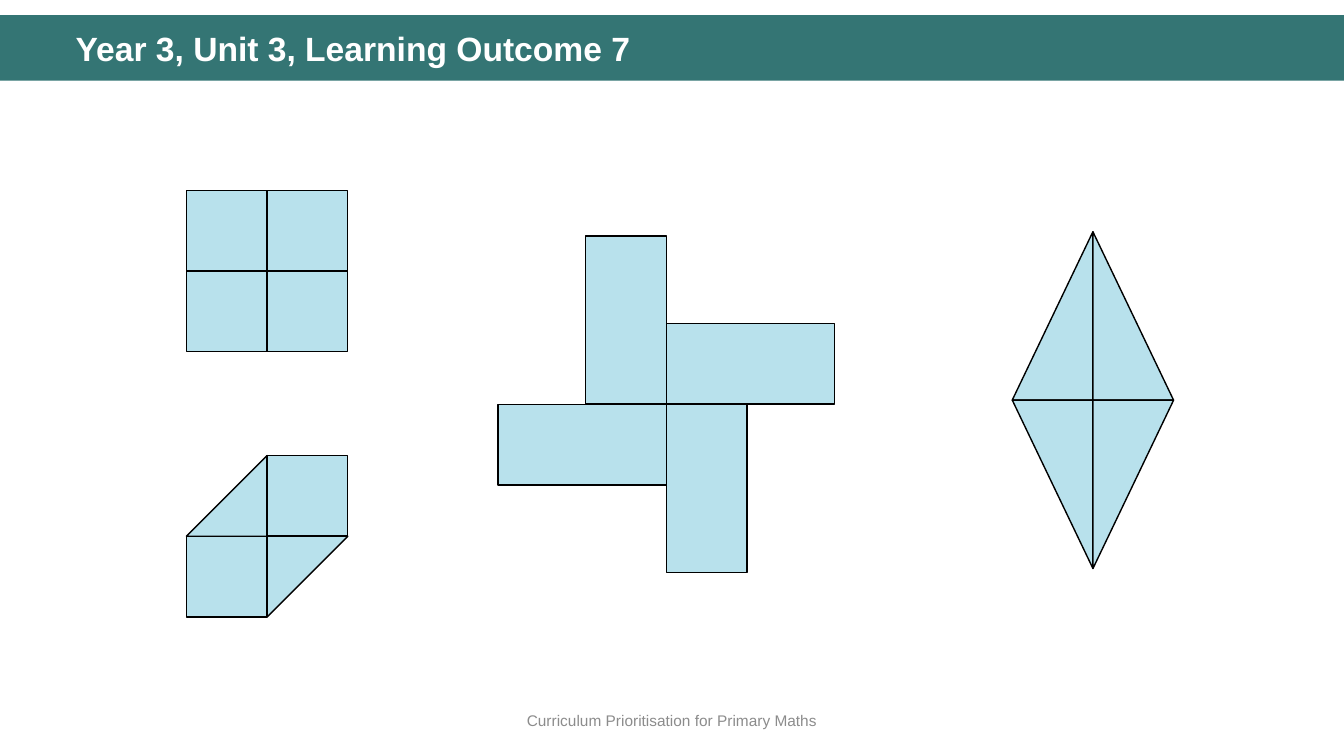
from math import cos, radians, sin

from pptx import Presentation
from pptx.dml.color import RGBColor
from pptx.enum.shapes import MSO_SHAPE
from pptx.enum.text import MSO_ANCHOR, MSO_AUTO_SIZE, PP_ALIGN
from pptx.util import Inches, Pt

TEAL = RGBColor(0x34, 0x75, 0x74)
PALE_BLUE = RGBColor(0xB8, 0xE1, 0xEC)
BLACK = RGBColor(0, 0, 0)
WHITE = RGBColor(255, 255, 255)
GREY = RGBColor(0x8C, 0x8C, 0x8C)

SLIDE_WIDTH = 13.33
SHORT = 0.8
LONG = 1.67
QUARTERS = [(-1, -1), (1, -1), (-1, 1), (1, 1)]


def write(holder, text, size, color, bold=False, align=PP_ALIGN.LEFT,
          anchor=MSO_ANCHOR.TOP, spacing=1.0):
    frame = holder.text_frame
    frame.word_wrap = True
    frame.auto_size = MSO_AUTO_SIZE.NONE
    frame.vertical_anchor = anchor
    frame.text = text
    paragraph = frame.paragraphs[0]
    paragraph.alignment = align
    paragraph.line_spacing = spacing
    font = paragraph.runs[0].font
    font.name = "Arial"
    font.size = Pt(size)
    font.bold = bold
    font.color.rgb = color


def place(holder, left, top, width, height):
    holder.left, holder.top = Inches(left), Inches(top)
    holder.width, holder.height = Inches(width), Inches(height)


def add_tile(slide, preset, left, top, width, height, fill=PALE_BLUE, outline=BLACK):
    tile = slide.shapes.add_shape(
        preset, Inches(left), Inches(top), Inches(width), Inches(height))
    tile.shadow.inherit = False
    tile.fill.solid()
    tile.fill.fore_color.rgb = fill
    if outline is None:
        tile.line.fill.background()
    else:
        tile.line.color.rgb = outline
        tile.line.width = Pt(1)
    return tile


def add_quarter(slide, preset, centre, side, width, height):
    (x, y), (across, down) = centre, side
    left = x if across > 0 else x - width
    top = y if down > 0 else y - height
    tile = add_tile(slide, preset, left, top, width, height)
    if preset == MSO_SHAPE.RIGHT_TRIANGLE:
        if down > 0:
            tile.rotation = 180
        if across == down:
            tile._element.spPr.xfrm.set("flipH", "1")


def add_square(slide, centre):
    for side in QUARTERS:
        add_quarter(slide, MSO_SHAPE.RECTANGLE, centre, side, SHORT, SHORT)


def add_hexagon(slide, centre):
    for side in QUARTERS:
        preset = MSO_SHAPE.RIGHT_TRIANGLE if side[0] == side[1] else MSO_SHAPE.RECTANGLE
        add_quarter(slide, preset, centre, side, SHORT, SHORT)


def add_rhombus(slide, centre):
    for side in QUARTERS:
        add_quarter(slide, MSO_SHAPE.RIGHT_TRIANGLE, centre, side, SHORT, LONG)


def add_pinwheel(slide, centre):
    x, y = centre
    for angle in range(0, 360, 90):
        c, s = cos(radians(angle)), sin(radians(angle))
        blade_x = x + (LONG * c + SHORT * s) / 2
        blade_y = y + (LONG * s - SHORT * c) / 2
        blade = add_tile(slide, MSO_SHAPE.RECTANGLE,
                         blade_x - LONG / 2, blade_y - SHORT / 2, LONG, SHORT)
        blade.rotation = angle


def add_header(slide, text):
    band = add_tile(slide, MSO_SHAPE.RECTANGLE, 0, 0.15, SLIDE_WIDTH, 0.65,
                    fill=TEAL, outline=None)
    title = slide.shapes.title
    title._element.addprevious(band._element)
    place(title, 0.65, 0.27, 12.32, 0.47)
    write(title, text, 24, WHITE, bold=True, spacing=0.9)


def add_footer(slide, text):
    footer = slide.shapes.add_textbox(
        Inches(0), Inches(6.95), Inches(SLIDE_WIDTH), Inches(0.4))
    write(footer, text, 11, GREY, align=PP_ALIGN.CENTER, anchor=MSO_ANCHOR.MIDDLE)


def main():
    deck = Presentation()
    deck.slide_width = Inches(SLIDE_WIDTH)
    deck.slide_height = Inches(7.5)
    slide = deck.slides.add_slide(deck.slide_layouts[5])
    add_header(slide, "Year 3, Unit 3, Learning Outcome 7")
    add_footer(slide, "Curriculum Prioritisation for Primary Maths")
    add_square(slide, (2.65, 2.69))
    add_pinwheel(slide, (6.61, 4.01))
    add_rhombus(slide, (10.84, 3.97))
    add_hexagon(slide, (2.65, 5.32))
    deck.save("out.pptx")


if __name__ == "__main__":
    main()
